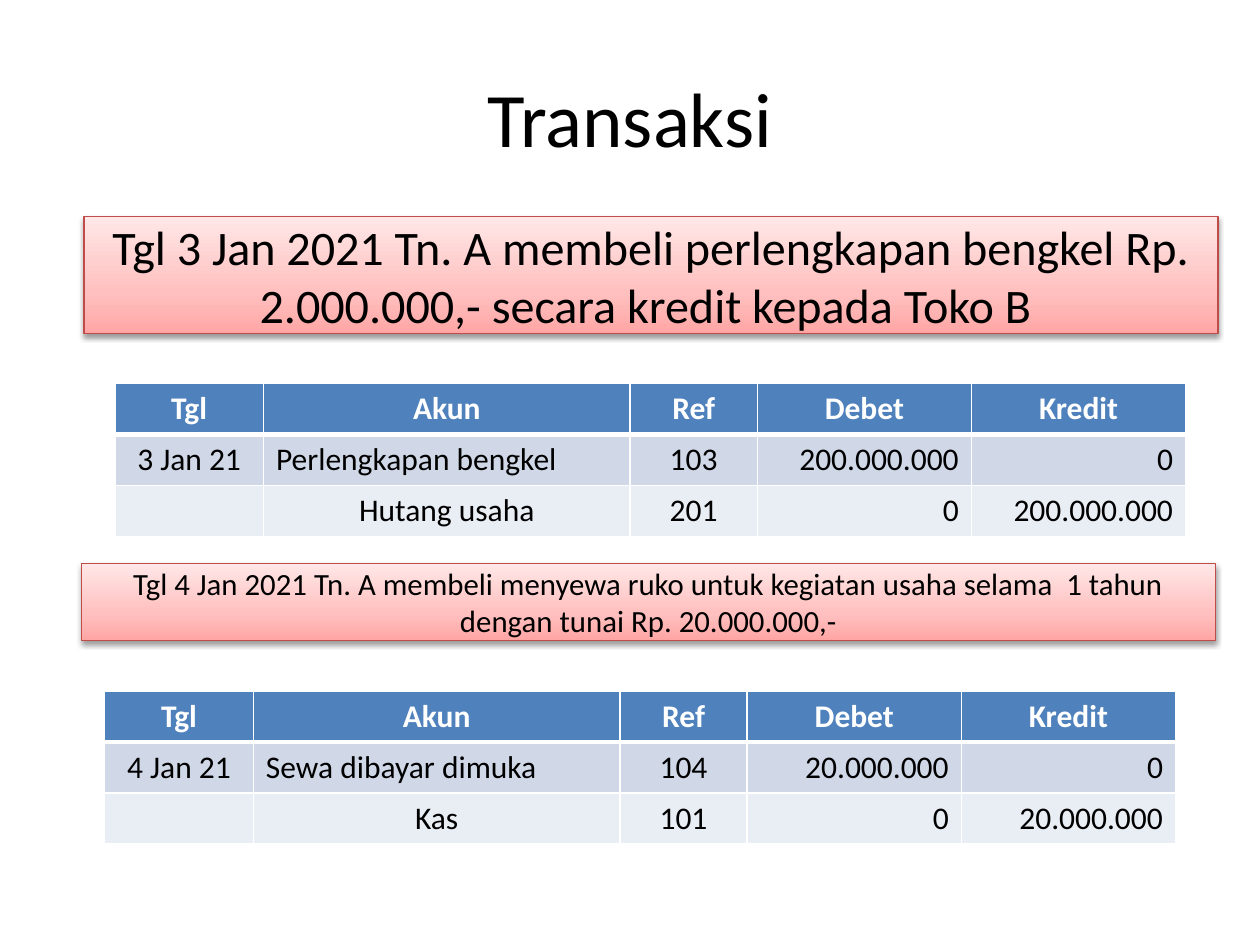
from copy import deepcopy

from lxml.etree import SubElement
from pptx import Presentation
from pptx.dml.color import RGBColor
from pptx.enum.shapes import MSO_SHAPE
from pptx.enum.text import MSO_ANCHOR, PP_ALIGN
from pptx.oxml.ns import qn
from pptx.util import Pt

FONT = "Calibri"
BLACK, WHITE = "000000", "FFFFFF"
BANNER_STOPS = [(0, "FFA6A5"), (0.35, "FFC0BF"), (1, "FFE7E7")]
BANNER_LINE = "BF4C48"
ROW_FILLS = ["4F81BD", "D0D8E8", "E9EDF4"]
HEADINGS = ["Tgl", "Akun", "Ref", "Debet", "Kredit"]
COLUMN_WIDTHS = [85, 209.5, 72.7, 122.4, 122.4]
ROW_HEIGHT = 29.2
LEFT, CENTER, RIGHT = PP_ALIGN.LEFT, PP_ALIGN.CENTER, PP_ALIGN.RIGHT
ROW_ALIGNMENTS = [
    [CENTER] * 5,
    [CENTER, LEFT, CENTER, RIGHT, RIGHT],
    [CENTER, CENTER, CENTER, RIGHT, RIGHT],
]


def color(value):
    return RGBColor.from_string(value)


def write(text_frame, text, size, text_color=BLACK, align=CENTER, bold=False):
    text_frame.word_wrap = True
    paragraph = text_frame.paragraphs[0]
    paragraph.text = text
    paragraph.alignment = align
    font = paragraph.font
    font.name, font.size, font.bold = FONT, Pt(size), bold
    font.color.rgb = color(text_color)


def add_title(slide, box, text):
    shape = slide.shapes.add_textbox(*map(Pt, box))
    shape.text_frame.vertical_anchor = MSO_ANCHOR.MIDDLE
    write(shape.text_frame, text, 44)


def add_shadow(shape):
    shape.shadow.inherit = False
    effects = shape._element.spPr.find(qn("a:effectLst"))
    shadow = SubElement(effects, qn("a:outerShdw"), blurRad=str(Pt(3.1)),
                        dist=str(Pt(1.6)), dir="5400000", rotWithShape="0")
    shade = SubElement(shadow, qn("a:srgbClr"), val=BLACK)
    SubElement(shade, qn("a:alpha"), val="38000")


def add_banner(slide, box, text, size):
    shape = slide.shapes.add_shape(MSO_SHAPE.RECTANGLE, *map(Pt, box))

    # Three-stop gradient, darkest at the bottom
    shape.fill.gradient()
    shape.fill.gradient_angle = 90
    stop_list = shape._element.spPr.find(".//" + qn("a:gsLst"))
    stop_list.append(deepcopy(stop_list[0]))
    for stop, (position, value) in zip(shape.fill.gradient_stops, BANNER_STOPS):
        stop.position = position
        stop.color.rgb = color(value)

    shape.line.color.rgb = color(BANNER_LINE)
    shape.line.width = Pt(0.75)
    add_shadow(shape)
    shape.text_frame.vertical_anchor = MSO_ANCHOR.MIDDLE
    write(shape.text_frame, text, size)


def add_borders(cell, bottom_width):
    properties = cell._tc.get_or_add_tcPr()
    widths = {"a:lnL": 1, "a:lnR": 1, "a:lnT": 1, "a:lnB": bottom_width}
    for index, (tag, width) in enumerate(widths.items()):
        line = SubElement(properties, qn(tag), w=str(Pt(width)))
        fill = SubElement(line, qn("a:solidFill"))
        SubElement(fill, qn("a:srgbClr"), val=WHITE)
        properties.insert(index, line)


def add_journal(slide, left, top, entries):
    rows = [HEADINGS, *entries]
    table = slide.shapes.add_table(
        len(rows), len(HEADINGS), Pt(left), Pt(top),
        Pt(sum(COLUMN_WIDTHS)), Pt(ROW_HEIGHT * len(rows))).table
    for column, width in zip(table.columns, COLUMN_WIDTHS):
        column.width = Pt(width)
    for row_index, values in enumerate(rows):
        table.rows[row_index].height = Pt(ROW_HEIGHT)
        header = row_index == 0
        for column_index, value in enumerate(values):
            cell = table.cell(row_index, column_index)
            cell.fill.solid()
            cell.fill.fore_color.rgb = color(ROW_FILLS[row_index])
            add_borders(cell, 3 if header else 1)
            write(cell.text_frame, value, 18, WHITE if header else BLACK,
                  ROW_ALIGNMENTS[row_index][column_index], header)


def main():
    presentation = Presentation()
    presentation.slide_width, presentation.slide_height = Pt(720), Pt(540)
    slide = presentation.slides.add_slide(presentation.slide_layouts[6])

    add_title(slide, (36, 21.6, 648, 90), "Transaksi")

    # Purchase on credit
    add_banner(slide, (48, 123.8, 648, 67), "Tgl 3 Jan 2021 Tn. A membeli perlengkapan "
               "bengkel Rp. 2.000.000,- secara kredit kepada Toko B ", 27.5)
    add_journal(slide, 65.6, 219, [
        ["3 Jan 21", "Perlengkapan bengkel", "103", "200.000.000", "0"],
        ["", "Hutang usaha", "201", "0", "200.000.000"],
    ])

    # Prepaid rent
    add_banner(slide, (46.6, 322, 648, 44), "Tgl 4 Jan 2021 Tn. A membeli menyewa ruko "
               "untuk kegiatan usaha selama  1 tahun dengan tunai Rp. 20.000.000,-", 17.6)
    add_journal(slide, 59.8, 394.8, [
        ["4 Jan 21", "Sewa dibayar dimuka", "104", "20.000.000", "0"],
        ["", "Kas", "101", "0", "20.000.000"],
    ])

    presentation.save("out.pptx")


if __name__ == "__main__":
    main()
